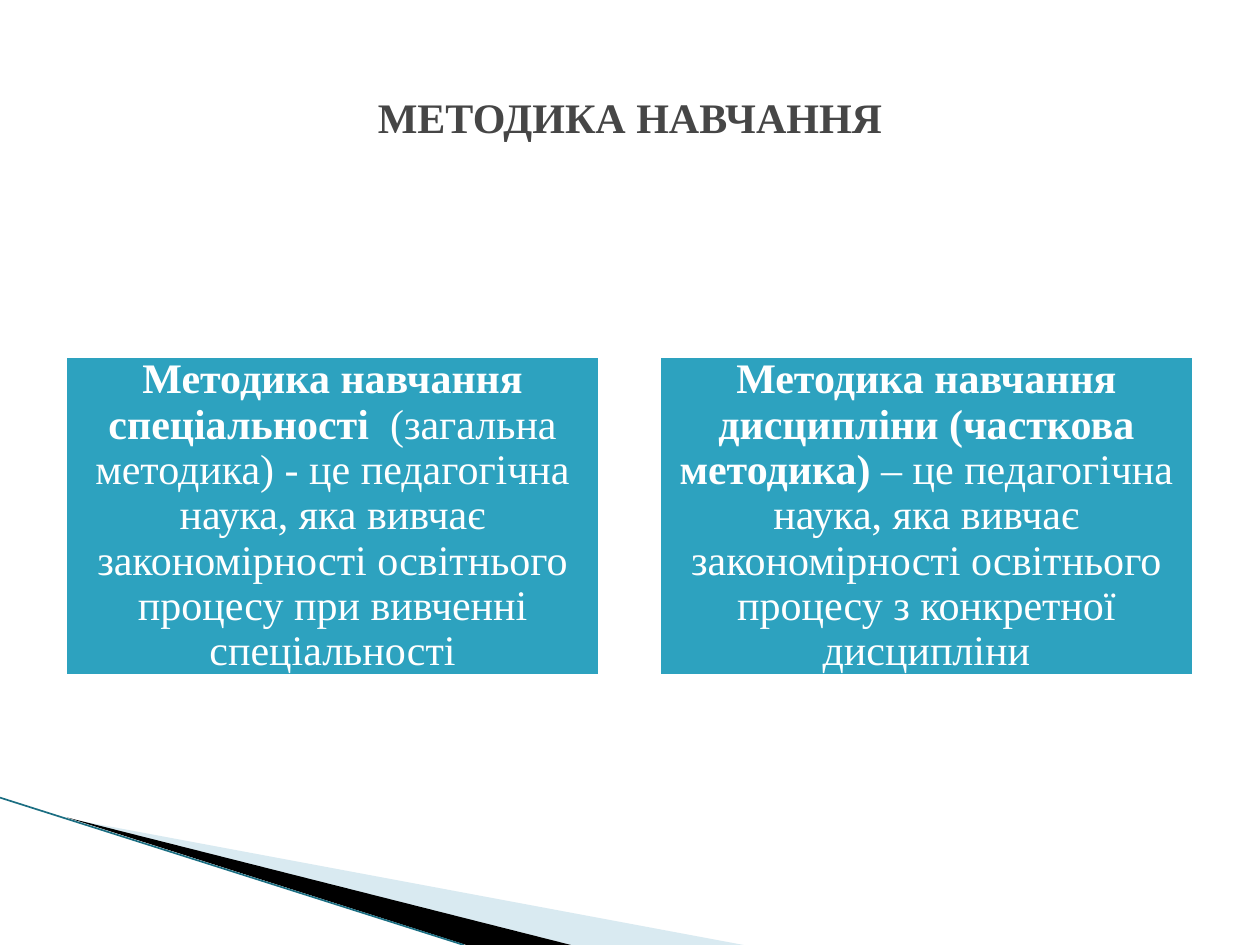
"""Builds the slide that sets out the two kinds of teaching methodology."""
from lxml.etree import SubElement
from pptx import Presentation
from pptx.dml.color import RGBColor
from pptx.enum.shapes import MSO_CONNECTOR as Connector, MSO_SHAPE as Shape
from pptx.enum.text import MSO_ANCHOR as Anchor, PP_ALIGN as Align
from pptx.oxml.ns import qn
from pptx.util import Cm, Pt

WHITE = RGBColor(0xFF, 0xFF, 0xFF)
BLACK = RGBColor(0x00, 0x00, 0x00)
GRAPHITE = RGBColor(0x46, 0x46, 0x46)
TEAL = RGBColor(0x2D, 0xA2, 0xBF)
DEEP_TEAL = RGBColor(0x1B, 0x6E, 0x82)
PALE_BLUE = RGBColor(0xA0, 0xCB, 0xDC)

DEFINITIONS = (
    ("Методика навчання спеціальності  ",
     "(загальна методика) - це педагогічна наука, яка вивчає закономірності "
     "освітнього процесу при вивченні спеціальності"),
    ("Методика навчання дисципліни (часткова методика) ",
     "– це педагогічна наука, яка вивчає закономірності освітнього процесу "
     "з конкретної дисципліни"),
)


def write(frame, bold, plain="", *, color, font="Times New Roman", size=24, spacing=1.0):
    frame.word_wrap = True
    frame.vertical_anchor = Anchor.MIDDLE
    paragraph = frame.paragraphs[0]
    paragraph.alignment = Align.CENTER
    paragraph.line_spacing = spacing
    for words, is_bold in ((bold, True), (plain, False)):
        if words:
            run = paragraph.add_run()
            run.text = words
            run.font.name = font
            run.font.size = Pt(size)
            run.font.bold = is_bold
            run.font.color.rgb = color


class Deck:
    def __init__(self):
        self.show = Presentation()
        self.show.slide_width, self.show.slide_height = Cm(25.4), Cm(19.05)
        self.shapes = self.show.slides.add_slide(self.show.slide_layouts[6]).shapes

    def wedge(self, corners, color, opacity=100):
        start, *rest = [(Cm(x), Cm(y)) for x, y in corners]
        builder = self.shapes.build_freeform(*start)
        builder.add_line_segments(rest, close=True)
        wedge = builder.convert_to_shape()
        wedge.shadow.inherit = False
        wedge.fill.solid()
        wedge.fill.fore_color.rgb = color
        wedge.line.fill.background()
        if opacity < 100:
            tint = wedge.fill._xPr.find(".//" + qn("a:srgbClr"))
            SubElement(tint, qn("a:alpha"), val=str(opacity * 1000))

    def rule(self, start, end, color, width):
        ends = [Cm(value) for value in (*start, *end)]
        rule = self.shapes.add_connector(Connector.STRAIGHT, *ends)
        rule.line.color.rgb = color
        rule.line.width = Pt(width)
        SubElement(rule._element.spPr, qn("a:effectLst"))

    def panel(self, left, top, width, height, term, meaning):
        panel = self.shapes.add_shape(
            Shape.RECTANGLE, Cm(left), Cm(top), Cm(width), Cm(height))
        panel.shadow.inherit = False
        panel.fill.solid()
        panel.fill.fore_color.rgb = TEAL
        panel.line.color.rgb = WHITE
        panel.line.width = Pt(4.33)
        frame = panel.text_frame
        frame.margin_left = frame.margin_right = Cm(0.25)
        frame.margin_top = frame.margin_bottom = Cm(0.25)
        write(frame, term, meaning, color=WHITE, spacing=0.9)

    def title(self, left, top, width, height, words):
        title = self.shapes.add_textbox(Cm(left), Cm(top), Cm(width), Cm(height))
        write(title.text_frame, words, color=GRAPHITE)


def main():
    deck = Deck()
    deck.wedge([(1.4, 16.51), (14.99, 19.05), (11.51, 19.05)], PALE_BLUE, opacity=40)
    deck.wedge([(1.35, 16.48), (11.51, 19.05), (9.4, 19.05)], BLACK)
    deck.rule((0, 16.08), (9.35, 19.05), DEEP_TEAL, 0.95)
    for column, (term, meaning) in enumerate(DEFINITIONS):
        deck.panel(1.27 + column * 11.97, 7.14, 10.87, 6.53, term, meaning)
    deck.title(1.27, 0.76, 22.86, 3.18, "МЕТОДИКА НАВЧАННЯ")
    deck.show.save("out.pptx")


if __name__ == "__main__":
    main()
